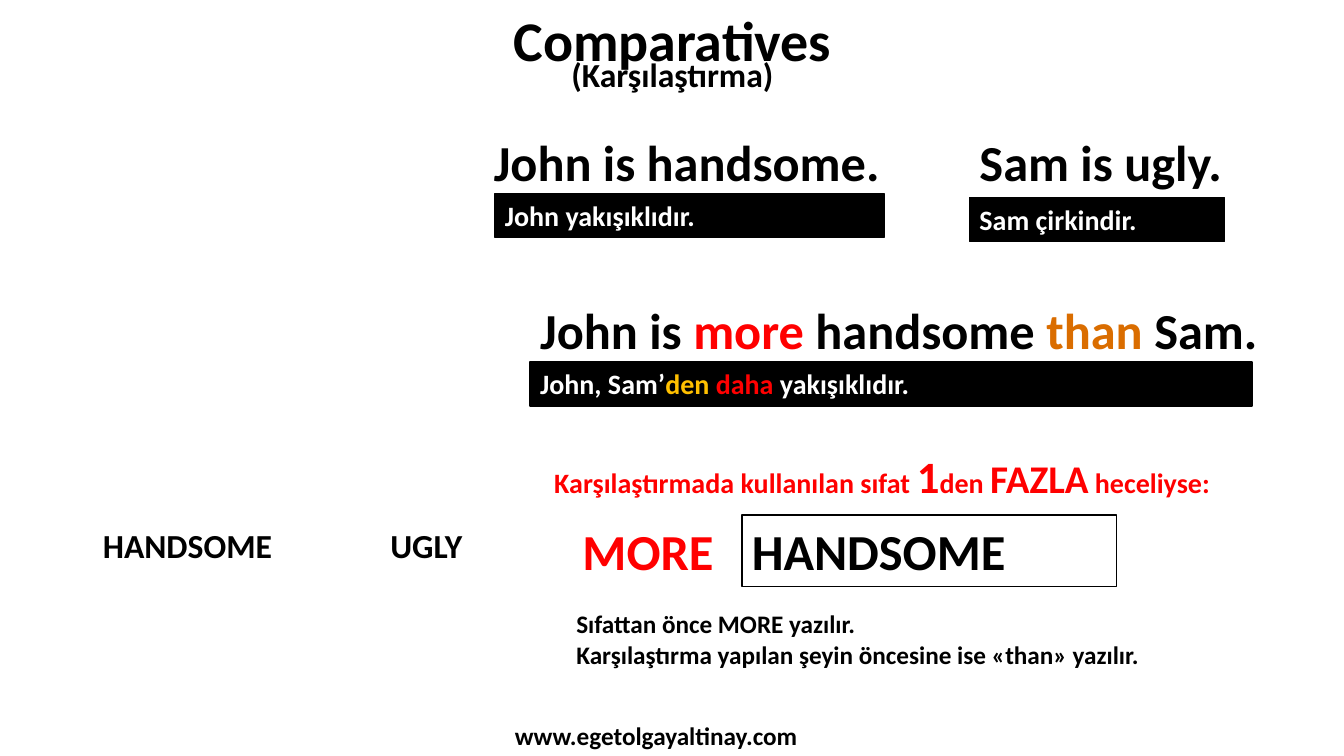
from dataclasses import dataclass

from pptx import Presentation
from pptx.dml.color import RGBColor
from pptx.enum import shapes, text
from pptx.util import Pt


@dataclass(frozen=True)
class Theme:
    font: str = "Calibri"
    black: str = "000000"
    white: str = "FFFFFF"
    red: str = "FF0000"
    orange: str = "DA6D00"
    gold: str = "FFC000"
    title: int = 40
    sentence: int = 36
    numeral: int = 32
    emphasis: int = 28
    label: int = 24
    translation: int = 20
    note: int = 18


theme = Theme()
LEFT, CENTER = text.PP_ALIGN.LEFT, text.PP_ALIGN.CENTER


def write(shape, runs, size, color=theme.black, align=LEFT):
    """Fill a shape with bold runs; each is a string or (string, overrides)."""
    frame = shape.text_frame
    frame_format = {"word_wrap": True, "auto_size": text.MSO_AUTO_SIZE.NONE,
                    "vertical_anchor": text.MSO_ANCHOR.TOP}
    for name, value in frame_format.items():
        setattr(frame, name, value)
    paragraph = frame.paragraphs[0]
    paragraph.alignment = align
    for item in runs:
        words, override = (item, {}) if isinstance(item, str) else item
        if words == "\n":
            paragraph.add_line_break()
            continue
        run = paragraph.add_run()
        run.text = words
        run_format = {"name": theme.font, "bold": True,
                      "size": Pt(override.get("size", size))}
        for name, value in run_format.items():
            setattr(run.font, name, value)
        run.font.color.rgb = RGBColor.from_string(override.get("color", color))


presentation = Presentation()
presentation.slide_width, presentation.slide_height = Pt(960), Pt(540)
slide = presentation.slides.add_slide(presentation.slide_layouts[5])

# Heading
heading = slide.shapes.title
heading_place = {"left": 305.3, "top": 0, "width": 350, "height": 55.4}
for name, value in heading_place.items():
    setattr(heading, name, Pt(value))
write(heading, ["Comparatives"], theme.title, align=CENTER)

# Black translation bars and the framed adjective
bars = [
    ((353.5, 138.2, 278, 31.5), ["John yakışıklıdır."]),
    ((692.6, 141.1, 182.2, 31.5), ["Sam çirkindir."]),
    ((378.7, 258.5, 515.5, 31.5),
     ["John, Sam’", ("den ", {"color": theme.gold}),
      ("daha", {"color": theme.red}), " yakışıklıdır."]),
]
boxes = [(place, runs, theme.translation, theme.black, theme.white)
         for place, runs in bars]
boxes.append(((529.9, 367.9, 267.8, 50.9), ["HANDSOME"],
              theme.sentence, theme.white, theme.black))
for place, runs, size, fill, color in boxes:
    box = slide.shapes.add_shape(shapes.MSO_SHAPE.RECTANGLE, *map(Pt, place))
    box.shadow.inherit = False
    box.fill.solid()
    box.fill.fore_color.rgb = RGBColor.from_string(fill)
    box.line.color.rgb = RGBColor.from_string(theme.black)
    box.line.width = Pt(1)
    write(box, runs, size, color)

# Sentences, rule, labels and footer
texts = [
    ((305.3, 35.3, 350, 36), ["(Karşılaştırma)"],
     theme.label, theme.black, CENTER),
    ((43.2, 371.5, 181.4, 36), ["HANDSOME"], theme.label, theme.black, CENTER),
    ((213.8, 371.5, 181.4, 36), ["UGLY"], theme.label, theme.black, CENTER),
    ((345.6, 90, 325.4, 50.9), ["John is handsome."],
     theme.sentence, theme.black, LEFT),
    ((692.6, 90, 309.6, 50.9), ["Sam is ugly."],
     theme.sentence, theme.black, LEFT),
    ((378.7, 210.2, 583.9, 50.9),
     ["John is ", ("more ", {"color": theme.red}), "handsome ",
      ("than", {"color": theme.orange}), " Sam."],
     theme.sentence, theme.black, LEFT),
    ((388.8, 316.8, 553, 46),
     ["Karşılaştırmada kullanılan sıfat ", ("1", {"size": theme.numeral}),
      "den ", ("FAZLA", {"size": theme.emphasis}), " heceliyse:"],
     theme.translation, theme.red, LEFT),
    ((409, 367.9, 141.8, 50.9), ["MORE"], theme.sentence, theme.red, LEFT),
    ((404.6, 431.3, 438.5, 50.9),
     ["Sıfattan önce MORE yazılır.", "\n",
      "Karşılaştırma yapılan şeyin öncesine ise «than» yazılır."],
     theme.note, theme.black, LEFT),
    ((270.7, 511.2, 396, 28.8), ["www.egetolgayaltinay.com"],
     theme.note, theme.black, CENTER),
]
for place, runs, size, color, align in texts:
    write(slide.shapes.add_textbox(*map(Pt, place)), runs, size, color, align)

presentation.save("out.pptx")
